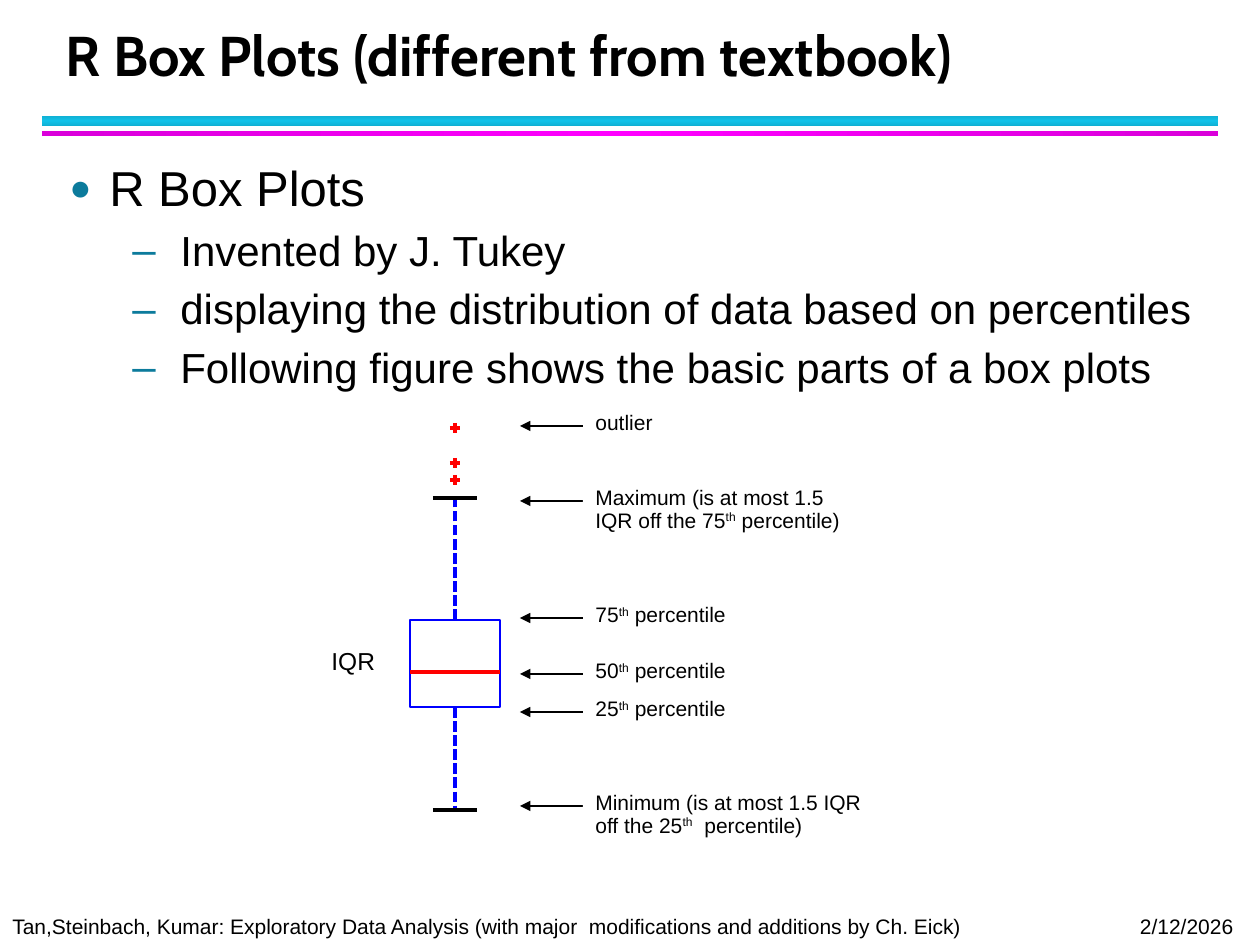
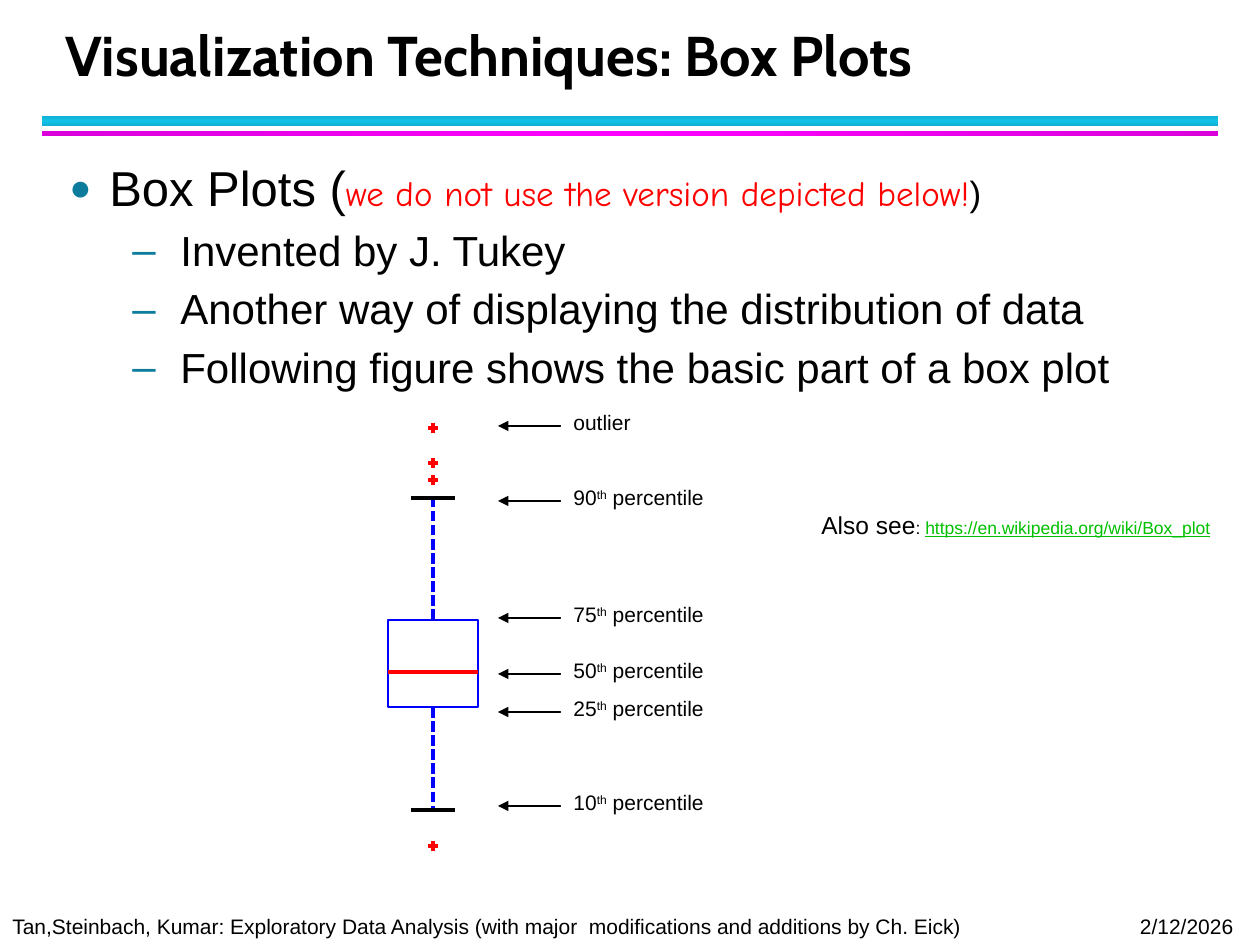
from copy import deepcopy
from dataclasses import dataclass

from pptx import Presentation
from pptx import util as u
from pptx.dml.color import RGBColor
from pptx.enum import shapes, text
from pptx.oxml import ns, xmlchemy

PX = u.Inches(1) / 126


@dataclass(frozen=True)
class Theme:
    ink: str = "000000"
    paper: str = "FFFFFF"
    red: str = "FF0000"
    blue: str = "0000FF"
    bullet: str = "0C7B9C"
    link: str = "00C000"
    cyan_band: tuple = ("10B0D3", "12C2E9", "10B0D3")
    magenta_band: tuple = ("DA00DA", "FF00FF", "DA00DA")
    title_font: str = "Cabin"
    body_font: str = "Arial"
    note_font: str = "Comic Neue"
    title: int = 32
    topic: int = 28
    point: int = 24
    note: int = 20
    caption: int = 14
    label: int = 12
    address: int = 10


THEME = Theme()
FOOTER = ("Tan,Steinbach, Kumar: Exploratory Data Analysis "
          "(with major  modifications and additions by Ch. Eick)\t2/12/2026")
TIGHT = {"line_spacing": 0.9, "space_after": u.Pt(4)}


def px(*lengths):
    return [u.Emu(round(length * PX)) for length in lengths]


def apply(target, values):
    for name, value in values.items():
        setattr(target, name, value)


def add_xml(parent, tag, **attributes):
    child = xmlchemy.OxmlElement(tag)
    for name, value in attributes.items():
        child.set(name, str(value))
    parent.append(child)
    return child


def write_span(para, words, size, color=THEME.ink, font=THEME.body_font,
               raised=False, **extra):
    span = para.add_run()
    span.text = words
    apply(span.font, {"size": u.Pt(size), "name": font, **extra})
    span.font.color.rgb = RGBColor.from_string(color)
    if raised:
        span._r.get_or_add_rPr().set("baseline", "30000")


def write_ordinals(para, words, size):
    """Write words, raising whatever stands between two carets."""
    for index, part in enumerate(words.split("^")):
        write_span(para, part, size, raised=index % 2 == 1)


def add_text(page, area, **frame_format):
    """Add a text box and return its frame."""
    frame = page.shapes.add_textbox(*px(*area)).text_frame
    apply(frame, {"word_wrap": True, **frame_format})
    return frame


def add_rect(page, area):
    box = page.shapes.add_shape(shapes.MSO_SHAPE.RECTANGLE, *px(*area))
    box.shadow.inherit = False
    box.line.fill.background()
    return box


def add_line(page, start, end, color, points=0):
    line = page.shapes.add_connector(
        shapes.MSO_CONNECTOR.STRAIGHT, *px(*start, *end))
    line.line.color.rgb = RGBColor.from_string(color)
    line.line.width = u.Pt(points)
    add_xml(line._element.spPr, "a:effectLst")
    return line


def add_band(page, area, colors, angle):
    band = add_rect(page, area)
    band.fill.gradient()
    band.fill.gradient_angle = angle
    stop_list = band._element.spPr.find(".//" + ns.qn("a:gsLst"))
    stop_list.append(deepcopy(stop_list[-1]))
    for index, (stop, color) in enumerate(zip(band.fill.gradient_stops, colors)):
        stop.position = index / 2
        stop.color.rgb = RGBColor.from_string(color)


def add_footer(page, area):
    para = add_text(page, area).paragraphs[0]
    apply(para, TIGHT)
    tabs = add_xml(para._p.get_or_add_pPr(), "a:tabLst")
    add_xml(tabs, "a:tab", pos=px(area[2] - 29)[0], algn="r")
    write_span(para, FOOTER, THEME.label)


def add_title(page, area, words):
    frame = add_text(page, area, vertical_anchor=text.MSO_ANCHOR.BOTTOM)
    para = frame.paragraphs[0]
    para.line_spacing = u.Pt(36)
    write_span(para, words, THEME.title, font=THEME.title_font, bold=True)


def add_bullet(para, mark, margin, hang, percent):
    props = para._p.get_or_add_pPr()
    props.set("marL", str(px(margin)[0]))
    props.set("indent", str(-px(hang)[0]))
    add_xml(add_xml(props, "a:buClr"), "a:srgbClr", val=THEME.bullet)
    add_xml(props, "a:buSzPct", val=percent * 1000)
    add_xml(props, "a:buFont", typeface=THEME.body_font)
    add_xml(props, "a:buChar", char=mark)


def add_body(page, area, topic, points):
    """Write the topic, a list of span settings, above its dashed points."""
    frame = add_text(page, area)
    para = frame.paragraphs[0]
    apply(para, TIGHT)
    add_bullet(para, "●", 40, 40, 75)
    for span in topic:
        write_span(para, **span)
    for point in points:
        para = frame.add_paragraph()
        apply(para, {**TIGHT, "level": 1, "space_before": u.Pt(3.5)})
        add_bullet(para, "–", 111, 48, 100)
        write_span(para, point, THEME.point)


def add_box_plot(page, left, top, outliers):
    """Draw the plot; outliers are heights below top."""
    center, upper, lower = left + 45, top + 75, top + 387
    box = add_rect(page, (left, top + 197, 90, 87))
    box.fill.background()
    box.line.color.rgb = RGBColor.from_string(THEME.blue)
    box.line.width = 0
    for whisker, edge, site in ((upper, top + 197, 0), (lower, top + 284, 2)):
        stem = add_line(page, (center, edge), (center, whisker), THEME.blue)
        stem.begin_connect(box, site)
        add_xml(stem.line._get_or_add_ln(), "a:prstDash", val="sysDash")
        add_line(page, (center - 22, whisker), (center + 22, whisker), THEME.ink)
    add_line(page, (left, top + 249), (left + 90, top + 249), THEME.red)
    for drop in outliers:
        y = top + drop
        add_line(page, (center - 5, y), (center + 5, y), THEME.red)
        add_line(page, (center, y - 5), (center, y + 5), THEME.red)


def add_callouts(page, left, top, labels):
    """Point an arrow from each (words, width) label at its part of the plot."""
    for drop, (words, width) in zip((3, 78, 195, 251, 289, 383), labels):
        y = top + drop
        arrow = add_line(page, (left + 110, y), (left + 173, y), THEME.ink, 0.75)
        add_xml(arrow.line._get_or_add_ln(), "a:headEnd", type="triangle")
        box = add_rect(page, (left + 173, y - 20, width, 47 if drop > 3 else 31))
        box.fill.solid()
        box.fill.fore_color.rgb = RGBColor.from_string(THEME.paper)
        apply(box.text_frame, {"word_wrap": True,
                               "vertical_anchor": text.MSO_ANCHOR.TOP})
        para = box.text_frame.paragraphs[0]
        apply(para, {**TIGHT, "alignment": text.PP_ALIGN.LEFT})
        write_ordinals(para, words, THEME.label)


def add_caption(page, area, spans):
    para = add_text(page, area, word_wrap=False).paragraphs[0]
    apply(para, TIGHT)
    for span in spans:
        write_span(para, **span)


def add_plot_page(deck, title, topic, points, plot_left, outliers, labels,
                  caption_area, caption):
    page = deck.slides.add_slide(deck.slide_layouts[6])
    add_band(page, (42, 116, 1176, 10), THEME.cyan_band, 90)
    add_band(page, (42, 131, 1176, 5), THEME.magenta_band, 0)
    add_footer(page, (0, 910, 1250, 35))
    add_title(page, (53, 21, 1142, 73), title)
    add_body(page, (57, 158, 1162, 252), topic, points)
    add_box_plot(page, plot_left, 423, outliers)
    add_callouts(page, plot_left, 423, labels)
    add_caption(page, caption_area, caption)


def percentile(rank):
    return f"{rank}^th^ percentile", 173


def main():
    deck = Presentation()
    deck.slide_width, deck.slide_height = px(1260, 945)
    outlier = ("outlier", 94)
    quartiles = [percentile(rank) for rank in (75, 50, 25)]

    add_plot_page(
        deck, "R Box Plots (different from textbook)",
        topic=[{"words": "R Box Plots", "size": THEME.topic}],
        points=["Invented by J. Tukey",
                "displaying the distribution of data based on percentiles",
                "Following figure shows the basic parts of a box plots"],
        plot_left=410, outliers=(5, 40, 57),
        labels=[outlier,
                ("Maximum (is at most 1.5 IQR off the 75^th^ percentile)", 278),
                *quartiles,
                ("Minimum (is at most 1.5 IQR off the 25^th^  percentile)", 300)],
        caption_area=(319, 643, 69, 39),
        caption=[{"words": "IQR", "size": THEME.caption}])

    add_plot_page(
        deck, "Visualization Techniques: Box Plots",
        topic=[{"words": "Box Plots (", "size": THEME.topic},
               {"words": "we do not use the version depicted below!",
                "size": THEME.note, "color": THEME.red, "font": THEME.note_font},
               {"words": ")", "size": THEME.note}],
        points=["Invented by J. Tukey",
                "Another way of displaying the distribution of data",
                "Following figure shows the basic part of a box plot"],
        plot_left=388, outliers=(5, 40, 57, 423),
        labels=[outlier, percentile(90), *quartiles, percentile(10)],
        caption_area=(809, 507, 417, 73),
        caption=[{"words": "Also see", "size": THEME.caption},
                 {"words": ": ", "size": THEME.address},
                 {"words": "https://en.wikipedia.org/wiki/Box_plot",
                  "size": THEME.address, "color": THEME.link,
                  "underline": True}])

    deck.save("out.pptx")


if __name__ == "__main__":
    main()
